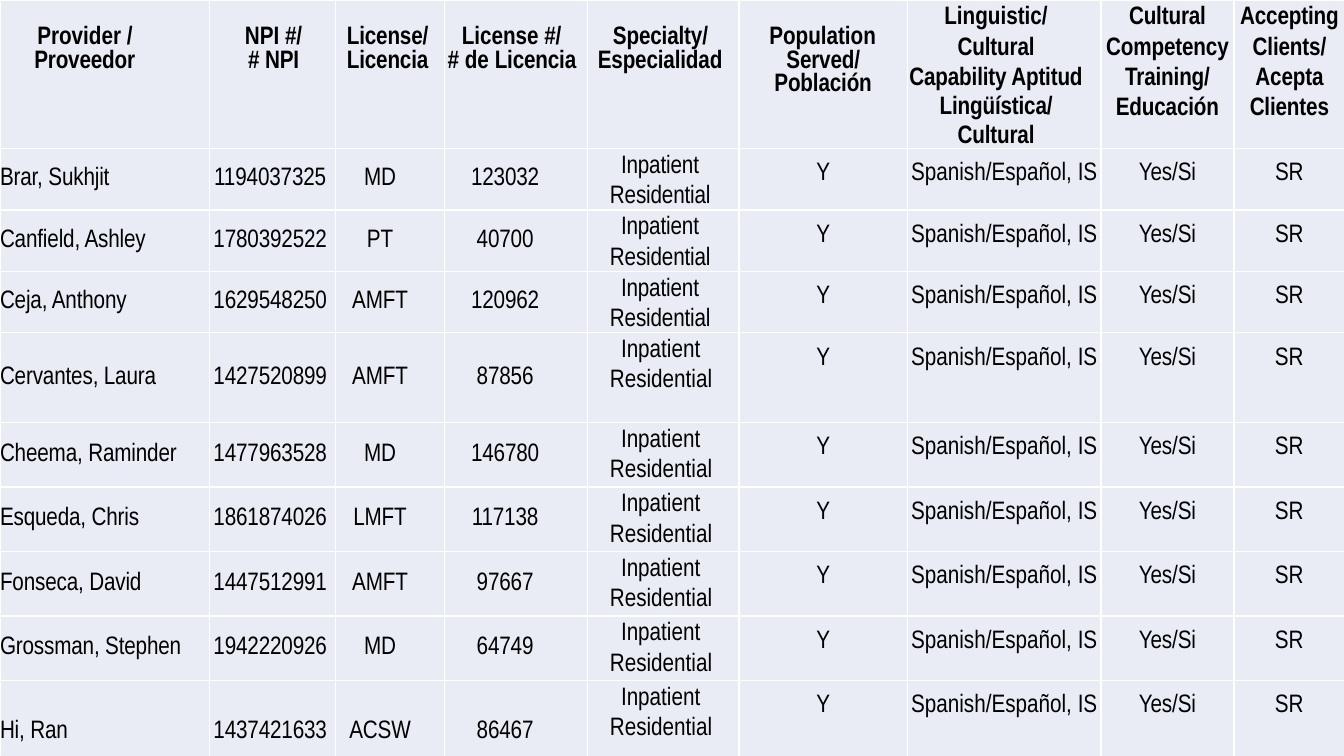
from lxml.etree import SubElement
from pptx import Presentation
from pptx.dml.color import RGBColor
from pptx.enum.text import MSO_ANCHOR, PP_ALIGN
from pptx.oxml.ns import qn
from pptx.util import Inches, Pt

COLORS = {"text": "000000", "cell": "E9EBF5", "border": "FFFFFF"}
LEFT, CENTER, RIGHT = PP_ALIGN.LEFT, PP_ALIGN.CENTER, PP_ALIGN.RIGHT

COLUMNS = [2.08, 1.25, 1.08, 1.42, 1.5, 1.67, 1.92, 1.32, 1.09]
ROWS = [1.47] + [0.61] * 3 + [0.89] + [0.64] * 4 + [1.03]

# Each header: paragraphs of (text, letter spacing) runs, then the format
HEADERS = [
    ([[("Provider ", 0), ("/ ", -0.5), ("Proveedor", -0.1)]],
     dict(top=0.26, left=0.34, first=0.03)),
    ([[("NPI ", 0), ("#/ ", -0.2), ("# ", 0), ("NPI", -0.2)]],
     dict(top=0.26, left=0.38, first=-0.03, right=0.25)),
    ([[("License/ Licencia", -0.1)]], dict(top=0.26, left=0.11)),
    ([[("License ", 0), ("#/\v", -0.2), ("# de ", 0), ("Licencia", -0.1)]],
     dict(top=0.26, left=0.03, first=0.14)),
    ([[("Specialty/ Especialidad", -0.1)]],
     dict(top=0.26, left=0.1, first=0.15)),
    ([[("Population ", 0), ("Served/ Población", -0.1)]],
     dict(top=0.26, left=0.06, first=-0.01, right=0.06, align=CENTER)),
    ([[("Linguistic/ ", 0), ("Cultural Capability Aptitud", -0.1)],
      [("Lingüística/Cultural", -0.1)]],
     dict(right=0.16, align=CENTER, lines=[21.6, 20.6])),
    ([[("Cultural Competency Training/ Educación", -0.1)]],
     dict(left=0.04, right=0.04, align=CENTER, lines=[21.6])),
    ([[("Accepting Clients/ Acepta Clientes", -0.1)]],
     dict(left=0.05, right=0.04, align=CENTER, lines=[21.6])),
]

PROVIDERS = [
    ("Brar, Sukhjit", "1194037325", "MD", "123032"),
    ("Canfield, Ashley", "1780392522", "PT", "40700"),
    ("Ceja, Anthony", "1629548250", "AMFT", "120962"),
    ("Cervantes, Laura", "1427520899", "AMFT", "87856"),
    ("Cheema, Raminder", "1477963528", "MD", "146780"),
    ("Esqueda, Chris", "1861874026", "LMFT", "117138"),
    ("Fonseca, David", "1447512991", "AMFT", "97667"),
    ("Grossman, Stephen", "1942220926", "MD", "64749"),
    ("Hi, Ran", "1437421633", "ACSW", "86467"),
]
MIDDLE = dict(anchor=MSO_ANCHOR.MIDDLE, before=10.3)
LOWERED = dict(top=0.14, before=10.3, align=CENTER)
PROVIDER_FORMATS = [
    MIDDLE,
    dict(MIDDLE, align=CENTER, right=0.05),
    dict(MIDDLE, align=CENTER, right=0.2),
    dict(MIDDLE, align=CENTER, right=0.22),
    dict(left=0.22, first=0.11, lines=[21.6]),
    LOWERED, LOWERED, LOWERED,
    dict(LOWERED, align=RIGHT, right=0.4),
]


def write_text(tf, paragraphs, bold=False, font="Arial Narrow", size=18,
               align=LEFT, left=0, first=0, right=0, before=0, lines=()):
    """Fill a text frame; lines holds exact line heights in points."""
    for i, runs in enumerate(paragraphs):
        p = tf.add_paragraph() if i else tf.paragraphs[0]
        p.alignment = align
        p.space_before = Pt(before)
        if lines:
            p.line_spacing = Pt(lines[i])
        pPr = p._p.get_or_add_pPr()
        for name, value in (("marL", left), ("marR", right), ("indent", first)):
            pPr.set(name, str(Inches(value)))
        for text, spacing in runs:
            r = p.add_run()
            r.text = text.rstrip("\v")
            r.font.name, r.font.size, r.font.bold = font, Pt(size), bold
            r.font.color.rgb = RGBColor.from_string(COLORS["text"])
            r._r.get_or_add_rPr().set("spc", str(round(spacing * 100)))
            if text.endswith("\v"):
                p.add_line_break()


class Deck:
    def __init__(self):
        self.prs = Presentation()
        self.prs.slide_width, self.prs.slide_height = Inches(13.33), Inches(7.5)
        self.s = self.prs.slides.add_slide(self.prs.slide_layouts[6])

    def table(self, columns, rows):
        frame = self.s.shapes.add_table(len(rows), len(columns), 0, 0,
                                        Inches(13.33), Inches(7.5))
        table = frame.table
        table.first_row = table.horz_banding = False
        for column, width in zip(table.columns, columns):
            column.width = Inches(width)
        for row, height in zip(table.rows, rows):
            row.height = Inches(height)
        return table

    def borders(self, cell, widths):
        tcPr = cell._tc.get_or_add_tcPr()
        for side, width in zip("LRTB", widths):
            ln = SubElement(tcPr, qn(f"a:ln{side}"), w=str(Pt(width)))
            fill = SubElement(ln, qn("a:solidFill"))
            SubElement(fill, qn("a:srgbClr"), val=COLORS["border"])

    def cell(self, table, row, col, paragraphs, top=0,
             anchor=MSO_ANCHOR.TOP, **text_format):
        cell = table.cell(row, col)
        last = len(table.columns) - 1
        self.borders(cell, (0.5 if col == 0 else 1, 0.5 if col == last else 1,
                            0.5 if row == 0 else 1, 1))
        cell.fill.solid()
        cell.fill.fore_color.rgb = RGBColor.from_string(COLORS["cell"])
        cell.margin_left = cell.margin_right = cell.margin_bottom = 0
        cell.margin_top = Inches(top)
        cell.vertical_anchor = anchor
        write_text(cell.text_frame, paragraphs, bold=row == 0, **text_format)


def main():
    deck = Deck()
    table = deck.table(COLUMNS, ROWS)
    for col, (paragraphs, header_format) in enumerate(HEADERS):
        deck.cell(table, 0, col, paragraphs, **header_format)
    for row, provider in enumerate(PROVIDERS, 1):
        tight = row <= 3
        texts = [[(value, -0.1)] for value in provider] + [
            [("Inpatient Residential", -0.1 if tight else 0)],
            [("Y", 0)],
            [("Spanish/Español, ", 0), ("IS", -0.2)],
            [("Yes/Si", -0.1)],
            [("SR", -0.2 if tight else 0)],
        ]
        for col, (runs, cell_format) in enumerate(zip(texts, PROVIDER_FORMATS)):
            deck.cell(table, row, col, [runs], **cell_format)
    deck.prs.save("out.pptx")


if __name__ == "__main__":
    main()
